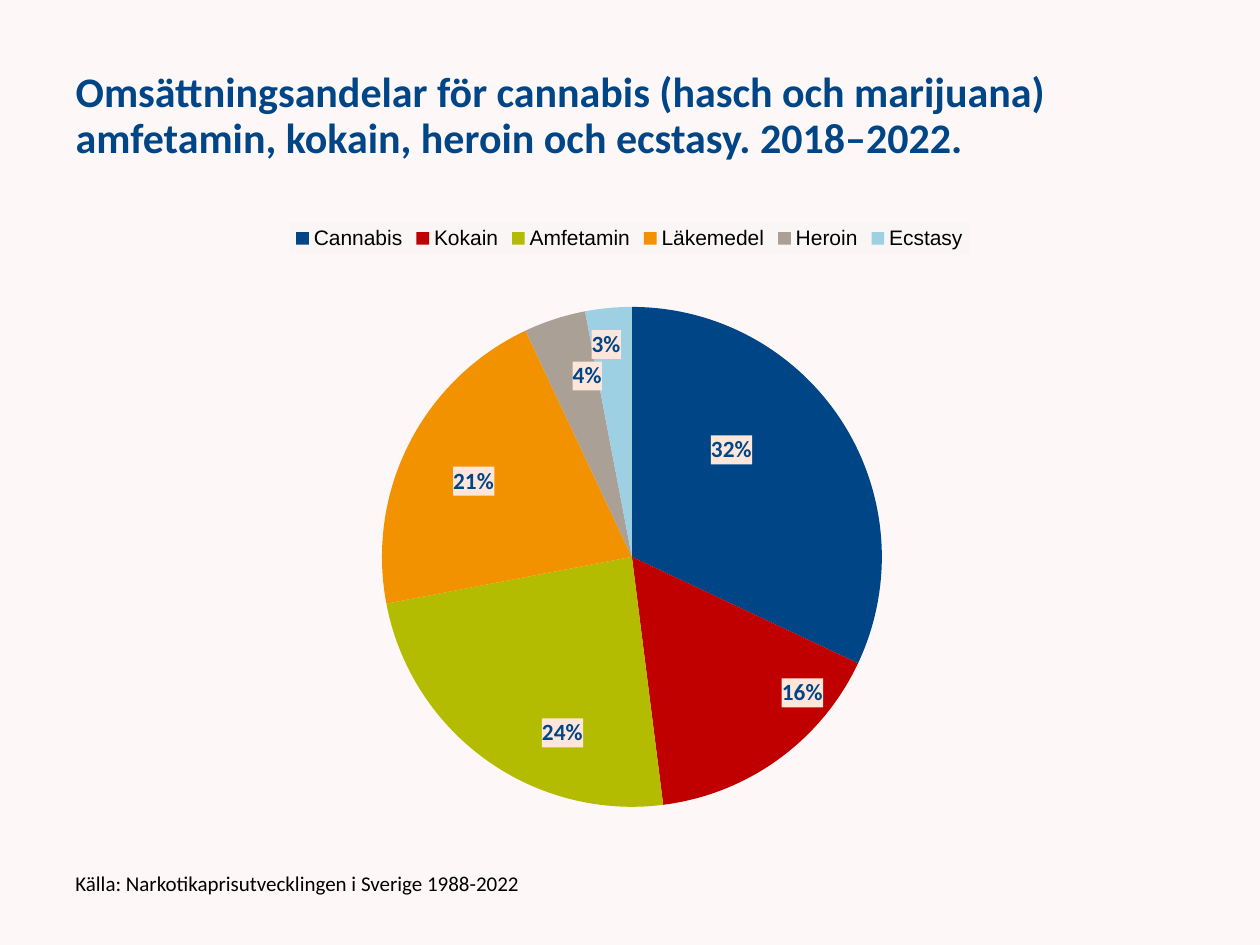
"""Build a slide with a pie chart of drug turnover shares in Sweden."""
from lxml import etree
from pptx import Presentation
from pptx.chart.data import CategoryChartData
from pptx.dml.color import RGBColor
from pptx.enum.chart import XL_CHART_TYPE, XL_LABEL_POSITION, XL_LEGEND_POSITION
from pptx.enum.text import MSO_ANCHOR, PP_ALIGN
from pptx.oxml import parse_xml
from pptx.oxml.ns import nsdecls, qn
from pptx.util import Emu, Pt

PIE = XL_CHART_TYPE.PIE
CENTER = XL_LABEL_POSITION.CENTER
TOP = XL_LEGEND_POSITION.TOP
MIDDLE = MSO_ANCHOR.MIDDLE
LEFT = PP_ALIGN.LEFT
PX = 914400 // 126
CHART_LEFT, CHART_TOP, CHART_WIDTH, CHART_HEIGHT = 62, 213, 1135, 624
COLORS = {
    "background": "FEF7F7", "navy": "004687", "black": "000000",
    "label": "FFE6DA", "legend": "FAF6F5",
    "Cannabis": "004687", "Kokain": "C00000", "Amfetamin": "B3BC00",
    "Läkemedel": "F29200", "Heroin": "AAA096", "Ecstasy": "9CD0E2",
}
SHARES = [
    ("Cannabis", 32, -6, -40),
    ("Kokain", 16, 97, 35),
    ("Amfetamin", 24, 4, 75),
    ("Läkemedel", 21, -47, -19),
    ("Heroin", 4, -6, -62),
    ("Ecstasy", 3, -14, -88),
]


def style_font(font, size, color, name="Calibri", bold=False):
    font.size = Pt(size)
    font.name = name
    font.bold = bold
    font.color.rgb = RGBColor.from_string(COLORS[color])


def chart_part(tag, content):
    return parse_xml(f'<c:{tag} {nsdecls("c", "a")}>{content}</c:{tag}>')


presentation = Presentation()
presentation.slide_width = Emu(1260 * PX)
presentation.slide_height = Emu(945 * PX)
slide = presentation.slides.add_slide(presentation.slide_layouts[5])
slide.background.fill.solid()
slide.background.fill.fore_color.rgb = RGBColor.from_string(COLORS["background"])

title = slide.shapes.title
title.left, title.top, title.width, title.height = [Emu(n * PX) for n in (63, 38, 1134, 158)]
title.text = "Omsättningsandelar för cannabis (hasch och marijuana) amfetamin, kokain, heroin och ecstasy. 2018–2022."
title.text_frame.vertical_anchor = MIDDLE
paragraph = title.text_frame.paragraphs[0]
paragraph.alignment = LEFT
paragraph.line_spacing = 0.9
style_font(paragraph.font, 24, "navy", bold=True)

chart_data = CategoryChartData()
chart_data.categories = [share[0] for share in SHARES]
chart_data.add_series("Series 1", [share[1] for share in SHARES])
chart = slide.shapes.add_chart(
    PIE, *[Emu(n * PX) for n in (CHART_LEFT, CHART_TOP, CHART_WIDTH, CHART_HEIGHT)], chart_data
).chart
chart.has_title = False
style_font(chart.font, 10, "black")

chart.has_legend = True
legend = chart.legend
legend.position = TOP
legend.include_in_layout = False
style_font(legend.font, 12, "black", "Arial")
legend_fill = f'<a:solidFill><a:srgbClr val="{COLORS["legend"]}"/></a:solidFill>'
legend.font
legend_element = legend._element
legend_element.find(qn("c:txPr")).addprevious(chart_part("spPr", legend_fill))

plot_area = chart._chartSpace.chart.plotArea
for old_layout in plot_area.findall(qn("c:layout")):
    plot_area.remove(old_layout)
plot_area.insert(0, chart_part("layout", (
    '<c:manualLayout><c:layoutTarget val="inner"/><c:xMode val="edge"/><c:yMode val="edge"/>'
    f'<c:x val="{320 / CHART_WIDTH:.4f}"/><c:y val="{94 / CHART_HEIGHT:.4f}"/>'
    f'<c:w val="{500 / CHART_WIDTH:.4f}"/><c:h val="{500 / CHART_HEIGHT:.4f}"/></c:manualLayout>'
)))

plot = chart.plots[0]
plot.vary_by_categories = True
series = plot.series[0]
labels = series.data_labels
labels.show_percentage = True
labels.show_value = False
labels.number_format = "0%"
labels.number_format_is_linked = False
labels.position = CENTER
style_font(labels.font, 13.3, "navy", bold=True)
label_fill = f'<a:solidFill><a:srgbClr val="{COLORS["label"]}"/></a:solidFill>'
labels._element.find(qn("c:txPr")).addprevious(chart_part("spPr", label_fill))

for index, (name, value, shift_x, shift_y) in enumerate(SHARES):
    point = series.points[index]
    point.format.fill.solid()
    point.format.fill.fore_color.rgb = RGBColor.from_string(COLORS[name])
    label = point.data_label
    style_font(label.font, 13.3, "navy", bold=True)
    label.position = CENTER
    element = labels._element.findall(qn("c:dLbl"))[index]
    element.find(qn("c:showVal")).set("val", "0")
    element.find(qn("c:showPercent")).set("val", "1")
    for old_part in element.findall(qn("c:spPr")):
        element.remove(old_part)
    layout = chart_part("layout", (
        f'<c:manualLayout><c:x val="{shift_x / CHART_WIDTH:.4f}"/>'
        f'<c:y val="{shift_y / CHART_HEIGHT:.4f}"/></c:manualLayout>'
    ))
    element.find(qn("c:idx")).addnext(layout)
    number_format = etree.Element(qn("c:numFmt"), formatCode="0%", sourceLinked="0")
    layout.addnext(number_format)
    number_format.addnext(chart_part("spPr", label_fill))

source = slide.shapes.add_textbox(*[Emu(n * PX) for n in (63, 861, 567, 47)])
source.text_frame.word_wrap = True
source.text_frame.vertical_anchor = MIDDLE
paragraph = source.text_frame.paragraphs[0]
paragraph.text = "Källa: Narkotikaprisutvecklingen i Sverige 1988-2022"
paragraph.line_spacing = 0.9
style_font(paragraph.font, 12, "black")

presentation.save("out.pptx")
